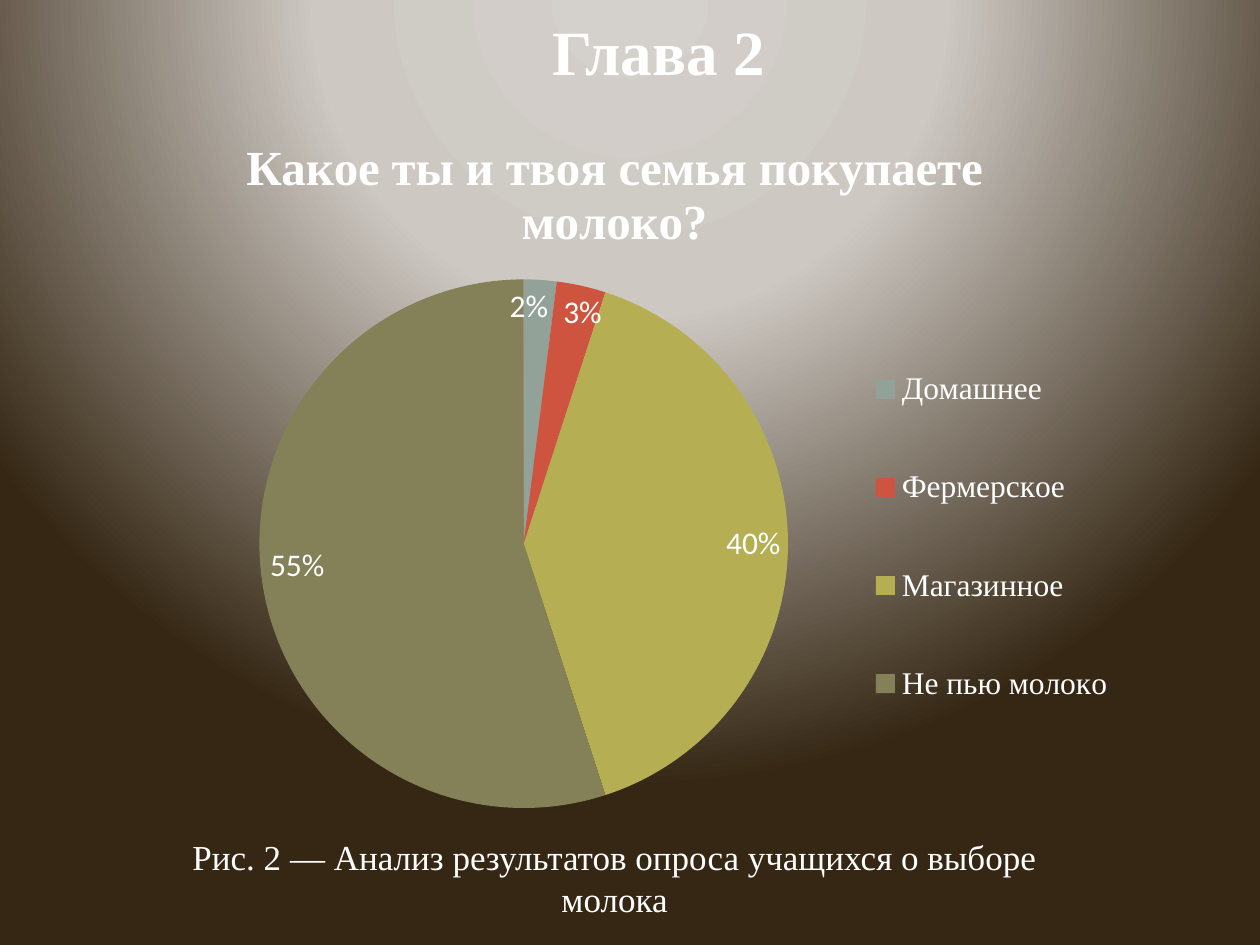
from dataclasses import dataclass

from lxml.etree import Element, SubElement
from pptx import Presentation
from pptx.chart.data import CategoryChartData
from pptx.dml.color import RGBColor
from pptx.enum.chart import XL_CHART_TYPE, XL_LABEL_POSITION, XL_LEGEND_POSITION
from pptx.enum.text import MSO_ANCHOR, PP_ALIGN
from pptx.oxml.ns import qn
from pptx.util import Cm, Pt

WHITE = RGBColor(0xFF, 0xFF, 0xFF)
SERIF = "Times New Roman"
SANS = "Calibri"
QUESTION = "Какое ты и твоя семья покупаете молоко?"
GRADIENT = ((0, RGBColor(0xD4, 0xD0, 0xCB)), (40, RGBColor(0xCD, 0xC8, 0xC2)),
            (100, RGBColor(0x35, 0x27, 0x14)))


@dataclass(frozen=True)
class Label:
    text: str
    left: float
    top: float
    width: float
    height: float
    size: int
    bold: bool
    anchor: MSO_ANCHOR


@dataclass(frozen=True)
class Slice:
    name: str
    value: int
    color: RGBColor
    label_shift: float = 0


LABELS = (
    Label("Глава 2", 2.49, -0.08, 21.59, 2.18, 36, True, MSO_ANCHOR.MIDDLE),
    Label("Рис. 2 — Анализ результатов опроса учащихся о выборе молока",
          3.5, 16.71, 17.78, 1.93, 20, False, MSO_ANCHOR.TOP),
)
SLICES = (
    Slice("Домашнее", 2, RGBColor(0x93, 0xA2, 0x99), -0.01),
    Slice("Фермерское", 3, RGBColor(0xCF, 0x54, 0x3F), 0.02),
    Slice("Магазинное", 40, RGBColor(0xB5, 0xAE, 0x53)),
    Slice("Не пью молоко", 55, RGBColor(0x84, 0x80, 0x58)),
)


def style_font(font, name: str, size: int, bold: bool = False) -> None:
    """Apply a white font of the given face and size."""
    font.name, font.size, font.bold = name, Pt(size), bold
    font.color.rgb = WHITE


def paint_background(s) -> None:
    """Fill the slide with a circular gradient centred above its top edge."""
    fill = s.background.fill
    fill.gradient()
    grad = s.element.find(".//" + qn("a:gradFill"))
    for child in list(grad):
        grad.remove(child)
    stops = SubElement(grad, qn("a:gsLst"))
    for pos, color in GRADIENT:
        stop = SubElement(stops, qn("a:gs"), pos=str(pos * 1000))
        SubElement(stop, qn("a:srgbClr"), val=str(color))
    shade = SubElement(grad, qn("a:path"), path="circle")
    SubElement(shade, qn("a:fillToRect"), l="50000", t="-80000", r="50000", b="180000")


def add_label(s, label: Label) -> None:
    """Add a centred text box."""
    sp = s.shapes.add_textbox(Cm(label.left), Cm(label.top), Cm(label.width), Cm(label.height))
    tf = sp.text_frame
    tf.word_wrap = True
    tf.vertical_anchor = label.anchor
    p = tf.paragraphs[0]
    p.text = label.text
    p.alignment = PP_ALIGN.CENTER
    style_font(p.font, SERIF, label.size, label.bold)


def set_layout(parent, before: str, **values) -> None:
    """Place a chart part by fractions of the chart size."""
    for old in parent.findall(qn("c:layout")):
        parent.remove(old)
    layout = Element(qn("c:layout"))
    manual = SubElement(layout, qn("c:manualLayout"))
    for tag, value in values.items():
        SubElement(manual, qn("c:" + tag), val=str(value))
    parent.find(qn("c:" + before)).addprevious(layout)


def add_pie(s) -> None:
    """Add the survey pie chart with its title, legend and percentages."""
    data = CategoryChartData()
    data.categories = [part.name for part in SLICES]
    data.add_series(QUESTION, [part.value for part in SLICES])
    chart = s.shapes.add_chart(XL_CHART_TYPE.PIE, Cm(1.9), Cm(2.13), Cm(22.2), Cm(14.6), data).chart
    style_font(chart.font, SANS, 18)

    chart.has_title = True
    p = chart.chart_title.text_frame.paragraphs[0]
    p.text = QUESTION
    style_font(p.font, SERIF, 28, True)
    chart.chart_title.include_in_layout = False

    chart.has_legend = True
    chart.legend.position = XL_LEGEND_POSITION.RIGHT
    chart.legend.include_in_layout = False
    style_font(chart.legend.font, SERIF, 18)

    plot = chart.plots[0]
    plot.vary_by_categories = True
    series = plot.series[0]
    labels = series.data_labels
    labels.show_percentage = True
    labels.show_value = False
    labels.number_format = "0%"
    labels.number_format_is_linked = False
    labels.position = XL_LABEL_POSITION.INSIDE_END
    style_font(labels.font, SANS, 18)
    for i, part in enumerate(SLICES):
        fill = series.points[i].format.fill
        fill.solid()
        fill.fore_color.rgb = part.color
        if part.label_shift:
            series.points[i].data_label.position = XL_LABEL_POSITION.INSIDE_END

    root = chart.element
    for item in root.iter(qn("c:dLbl")):
        item.find(qn("c:showVal")).set("val", "0")
        item.find(qn("c:showPercent")).set("val", "1")
        index = int(item.find(qn("c:idx")).get("val"))
        set_layout(item, "dLblPos", x=SLICES[index].label_shift, y=0)
    set_layout(root.find(".//" + qn("c:title")), "overlay",
               xMode="edge", yMode="edge", x=0.13, y=0.03)
    set_layout(root.find(".//" + qn("c:legend")), "overlay",
               xMode="edge", yMode="edge", x=0.69, y=0.28, w=0.25, h=0.63)
    set_layout(root.find(".//" + qn("c:plotArea")), "pieChart", layoutTarget="inner",
               xMode="edge", yMode="edge", x=0.15, y=0.24, w=0.48, h=0.73)


def main() -> None:
    """Build the slide and save it."""
    prs = Presentation()
    prs.slide_width, prs.slide_height = Cm(25.4), Cm(19.05)
    s = prs.slides.add_slide(prs.slide_layouts[6])
    paint_background(s)
    for label in LABELS:
        add_label(s, label)
    add_pie(s)
    prs.save("out.pptx")


if __name__ == "__main__":
    main()
